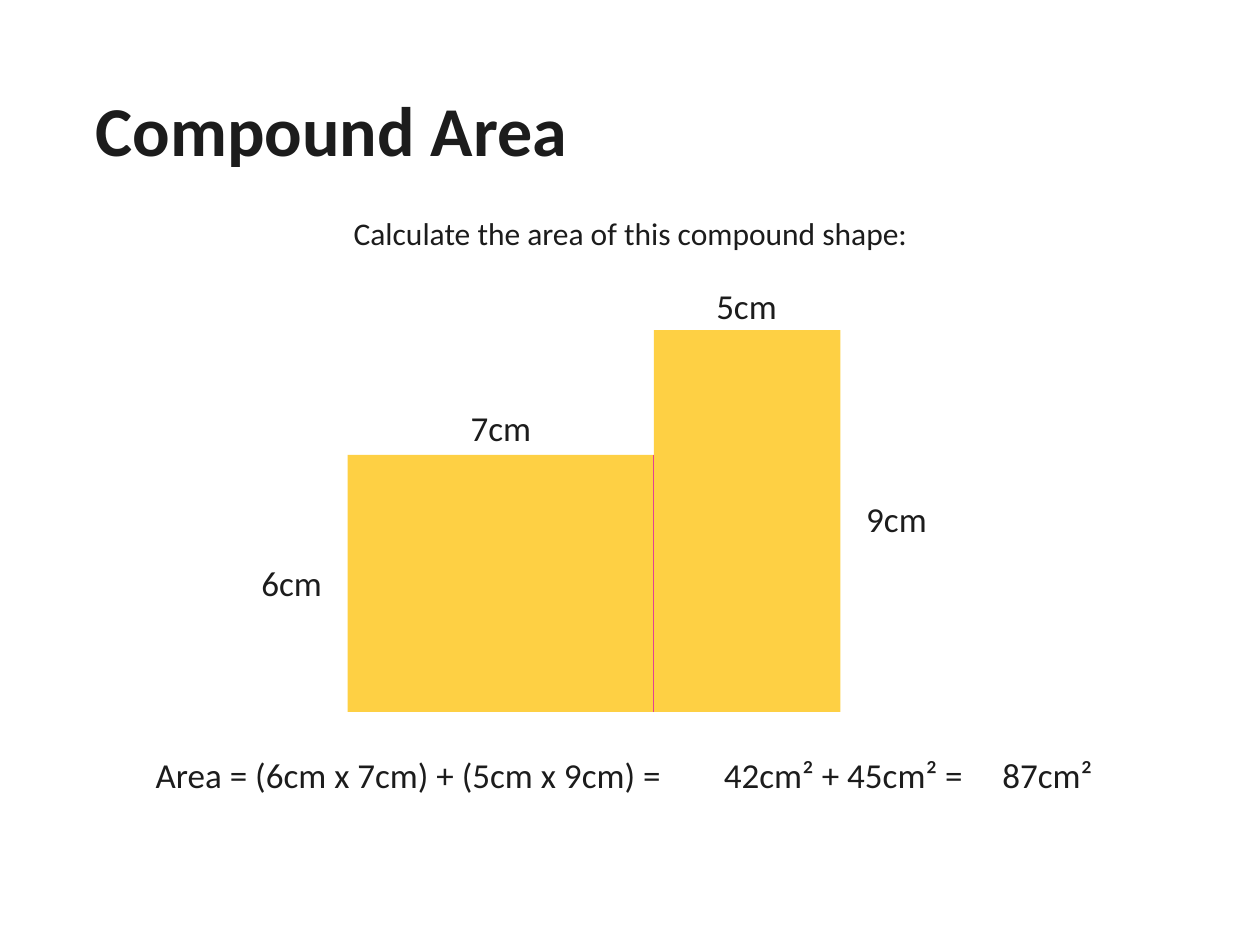
from dataclasses import dataclass

from lxml.etree import SubElement
from pptx import Presentation
from pptx.dml.color import RGBColor
from pptx.enum.shapes import MSO_CONNECTOR, MSO_SHAPE
from pptx.enum.text import MSO_ANCHOR, PP_ALIGN
from pptx.oxml.ns import qn
from pptx.util import Inches, Pt


@dataclass(frozen=True)
class Theme:
    font: str = "Calibri"
    ink: str = "1C1C1C"
    block: str = "FED044"
    seam: str = "E34192"
    title: int = 40
    lead: int = 18
    body: int = 20


@dataclass(frozen=True)
class Box:
    left: float
    top: float
    width: float
    height: float

    def emu(self) -> list:
        return [Inches(n) for n in (self.left, self.top, self.width, self.height)]


THEME = Theme()


def add_text(slide, text: str, box: Box, *, size: int = THEME.body,
             bold: bool = False, align=PP_ALIGN.LEFT, anchor=MSO_ANCHOR.MIDDLE,
             inset: float = 0.1, space: float = 1.0, rounded: bool = False) -> None:
    if rounded:
        shape = slide.shapes.add_shape(MSO_SHAPE.ROUNDED_RECTANGLE, *box.emu())
        shape.shadow.inherit = False
        shape.fill.background()
        shape.line.fill.background()
    else:
        shape = slide.shapes.add_textbox(*box.emu())
    frame = shape.text_frame
    frame.word_wrap = True
    frame.vertical_anchor = anchor
    frame.margin_left = frame.margin_right = Inches(inset)
    para = frame.paragraphs[0]
    para.alignment = align
    para.line_spacing = space
    run = para.add_run()
    run.text = text
    run.font.name = THEME.font
    run.font.size = Pt(size)
    run.font.bold = bold
    run.font.color.rgb = RGBColor.from_string(THEME.ink)


def add_block(slide, box: Box) -> None:
    shape = slide.shapes.add_shape(MSO_SHAPE.RECTANGLE, *box.emu())
    shape.shadow.inherit = False
    shape.fill.solid()
    shape.fill.fore_color.rgb = RGBColor.from_string(THEME.block)
    shape.line.fill.background()


def add_seam(slide, x: float, top: float, base: float) -> None:
    line = slide.shapes.add_connector(
        MSO_CONNECTOR.STRAIGHT, Inches(x), Inches(top), Inches(x), Inches(base))
    line.line.color.rgb = RGBColor.from_string(THEME.seam)
    line.line.width = Pt(0.5)
    SubElement(line._element.spPr, qn("a:effectLst"))


def main() -> None:
    deck = Presentation()
    deck.slide_width, deck.slide_height = Inches(10), Inches(7.5)
    slide = deck.slides.add_slide(deck.slide_layouts[6])

    # Heading and task
    add_text(slide, "Compound Area", Box(0.5, 0.52, 8.99, 1.09),
             size=THEME.title, bold=True, inset=0.26, space=0.9)
    add_text(slide, "Calculate the area of this compound shape:",
             Box(0.83, 1.56, 8.35, 0.57), size=THEME.lead,
             align=PP_ALIGN.CENTER, rounded=True)

    # Two blocks that share a base and an edge
    seam, base = 5.19, 5.65
    tall = Box(seam, 2.62, 1.48, base - 2.62)
    wide = Box(seam - 2.43, 3.61, 2.43, base - 3.61)
    for block in (tall, wide):
        add_block(slide, block)

    # Side lengths
    sides = (("7cm", 3.53, 3.18), ("6cm", 1.87, 4.41),
             ("5cm", 5.48, 2.21), ("9cm", 6.67, 3.9))
    for text, left, top in sides:
        add_text(slide, text, Box(left, top, 0.89, 0.44),
                 align=PP_ALIGN.CENTER, anchor=MSO_ANCHOR.TOP)

    # Working, left to right
    steps = (("Area = (6cm x 7cm) + (5cm x 9cm) =", 1.11, 4.7),
             ("42cm² + 45cm² =", 5.62, 2.34), ("87cm²", 7.83, 1.06))
    for text, left, width in steps:
        add_text(slide, text, Box(left, 5.86, width, 0.57), rounded=True)

    add_seam(slide, seam, wide.top, base)
    deck.save("out.pptx")


if __name__ == "__main__":
    main()
